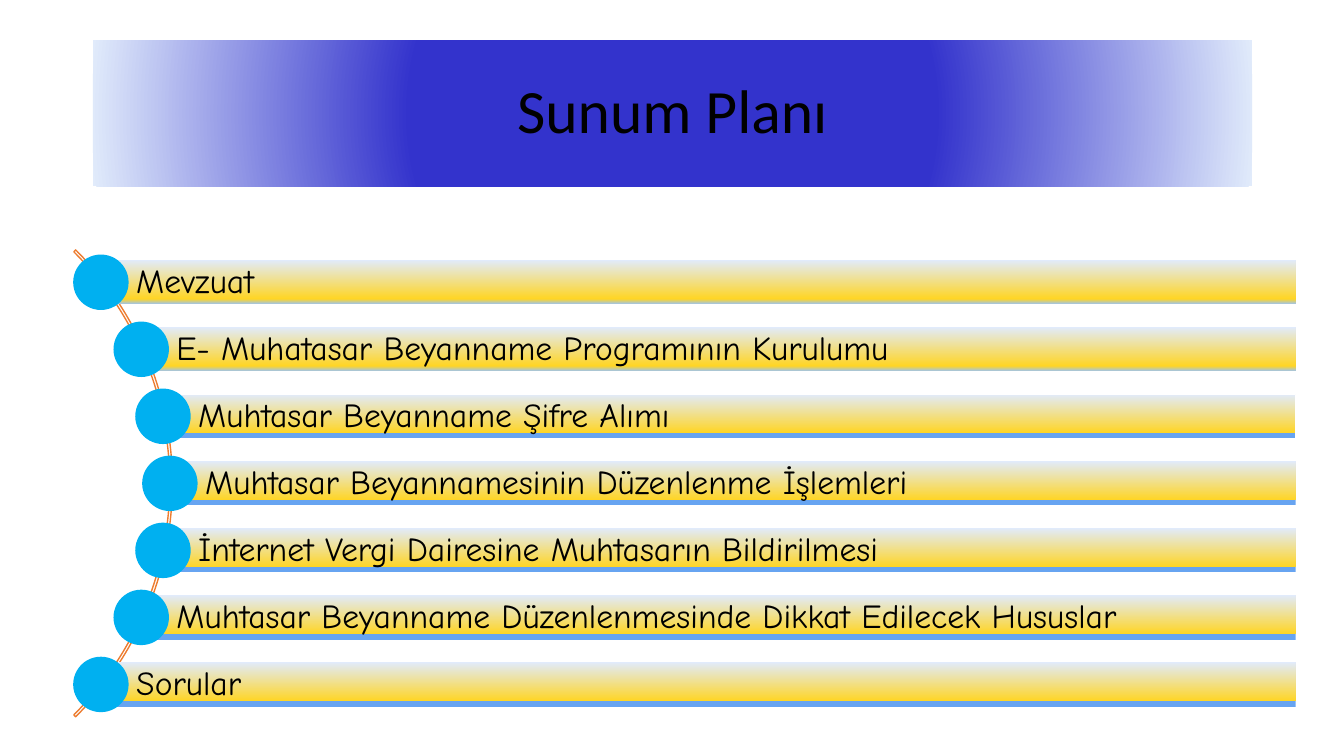
import math

import lxml.etree
import pptx
import pptx.dml.color
import pptx.enum.shapes
import pptx.enum.text
import pptx.oxml.ns
import pptx.util

SHAPES = pptx.enum.shapes.MSO_SHAPE
ALIGN = pptx.enum.text.PP_ALIGN
qn = pptx.oxml.ns.qn

TOPICS = [
    "Mevzuat",
    "E- Muhatasar Beyanname Programının Kurulumu",
    "Muhtasar Beyanname Şifre Alımı",
    "Muhtasar Beyannamesinin Düzenlenme İşlemleri",
    "İnternet Vergi Dairesine Muhtasarın Bildirilmesi",
    "Muhtasar Beyanname Düzenlenmesinde Dikkat Edilecek Hususlar",
    "Sorular",
]
SOFT_BAR = [(0, "9AC3F5"), (12, "FFD524"), (100, "E1EBFB")]
SHARP_BAR = [(12, "67A4F1"), (12, "FFD524"), (100, "E1EBFB")]
BANNER = [(4, "3333CC"), (45, "3333CC"), (100, "E1EBFB")]


def color(value):
    return pptx.dml.color.RGBColor.from_string(value)


class PlanSlide:
    GRID = pptx.util.Inches(0.1)
    TITLE_FONT = "Calibri"
    BODY_FONT = "Comic Neue"
    TEXT = "000000"
    DOT = "00B0F0"
    ARC = "ED7D31"

    def __init__(self, presentation):
        self.slide = presentation.slides.add_slide(presentation.slide_layouts[5])

    def cells(self, *counts):
        return [round(count * self.GRID) for count in counts]

    def gradient(self, shape, stops, circular=False):
        shape.fill.gradient()
        fill = shape._element.spPr.find(qn("a:gradFill"))
        fill.clear()
        fill.set("rotWithShape", "1")
        stop_list = lxml.etree.SubElement(fill, qn("a:gsLst"))
        for position, value in stops:
            stop = lxml.etree.SubElement(stop_list, qn("a:gs"), pos=str(position * 1000))
            lxml.etree.SubElement(stop, qn("a:srgbClr"), val=value)
        if circular:
            route = lxml.etree.SubElement(fill, qn("a:path"), {"path": "circle"})
            center = dict.fromkeys("ltrb", "50000")
            lxml.etree.SubElement(route, qn("a:fillToRect"), center)
        else:
            lxml.etree.SubElement(fill, qn("a:lin"), ang="16200000", scaled="0")

    def add_text(self, shape, text, font, size, align):
        frame = shape.text_frame
        frame.word_wrap = True
        frame.vertical_anchor = pptx.enum.text.MSO_ANCHOR.MIDDLE
        paragraph = frame.paragraphs[0]
        paragraph.alignment = align
        paragraph.line_spacing = 0.9
        run = paragraph.add_run()
        run.text = text
        run.font.name = font
        run.font.size = pptx.util.Pt(size)
        run.font.color.rgb = color(self.TEXT)

    def outline(self, shape, value=None, width=0.75):
        if value is None:
            shape.line.fill.background()
        else:
            shape.line.color.rgb = color(value)
            shape.line.width = pptx.util.Pt(width)

    def add_shape(self, kind, *place):
        shape = self.slide.shapes.add_shape(kind, *self.cells(*place))
        shape.shadow.inherit = False
        return shape

    def title(self, text, *place):
        shape = self.slide.shapes.title
        shape.left, shape.top, shape.width, shape.height = self.cells(*place)
        self.gradient(shape, BANNER, circular=True)
        self.add_text(shape, text, self.TITLE_FONT, 44, ALIGN.CENTER)

    def arc(self, center_column, center_row, radius):
        shape = self.add_shape(SHAPES.BLOCK_ARC, center_column - radius,
                               center_row - radius, 2 * radius, 2 * radius)
        for index, value in enumerate((189, 27, 0.004)):
            shape.adjustments[index] = value
        shape.fill.background()
        self.outline(shape, self.ARC, 1)

    def bar(self, text, stops, border, *place):
        shape = self.add_shape(SHAPES.RECTANGLE, *place)
        self.gradient(shape, stops)
        self.outline(shape, border)
        frame = shape.text_frame
        frame.margin_left, margin = self.cells(3.5, 0.7)
        frame.margin_top = frame.margin_right = frame.margin_bottom = margin
        self.add_text(shape, text, self.BODY_FONT, 24, ALIGN.LEFT)

    def dot(self, column, row, size):
        shape = self.add_shape(SHAPES.OVAL, column - size / 2, row - size / 2, size, size)
        shape.fill.solid()
        shape.fill.fore_color.rgb = color(self.DOT)
        self.outline(shape)


def main():
    presentation = pptx.Presentation()
    presentation.slide_width = pptx.util.Inches(13.33)
    presentation.slide_height = pptx.util.Inches(7.5)
    plan = PlanSlide(presentation)
    plan.title("Sunum Planı", 9.2, 4, 115, 14.5)

    center_column, center_row = -15.65, 47.95
    pitch, height, right, track = 6.65, 4.4, 128.5, 32.5
    plan.arc(center_column, center_row, 32.75)
    for index, topic in enumerate(TOPICS):
        offset = (index - len(TOPICS) // 2) * pitch
        column = center_column + math.sqrt(track ** 2 - offset ** 2)
        row = center_row + offset
        stops = SOFT_BAR if index < 2 else SHARP_BAR
        border = "FFFFFF" if index == 2 else None
        plan.bar(topic, stops, border, column, row - height / 2, right - column, height)
        plan.dot(column, row, 5.5)

    presentation.save("out.pptx")


if __name__ == "__main__":
    main()
